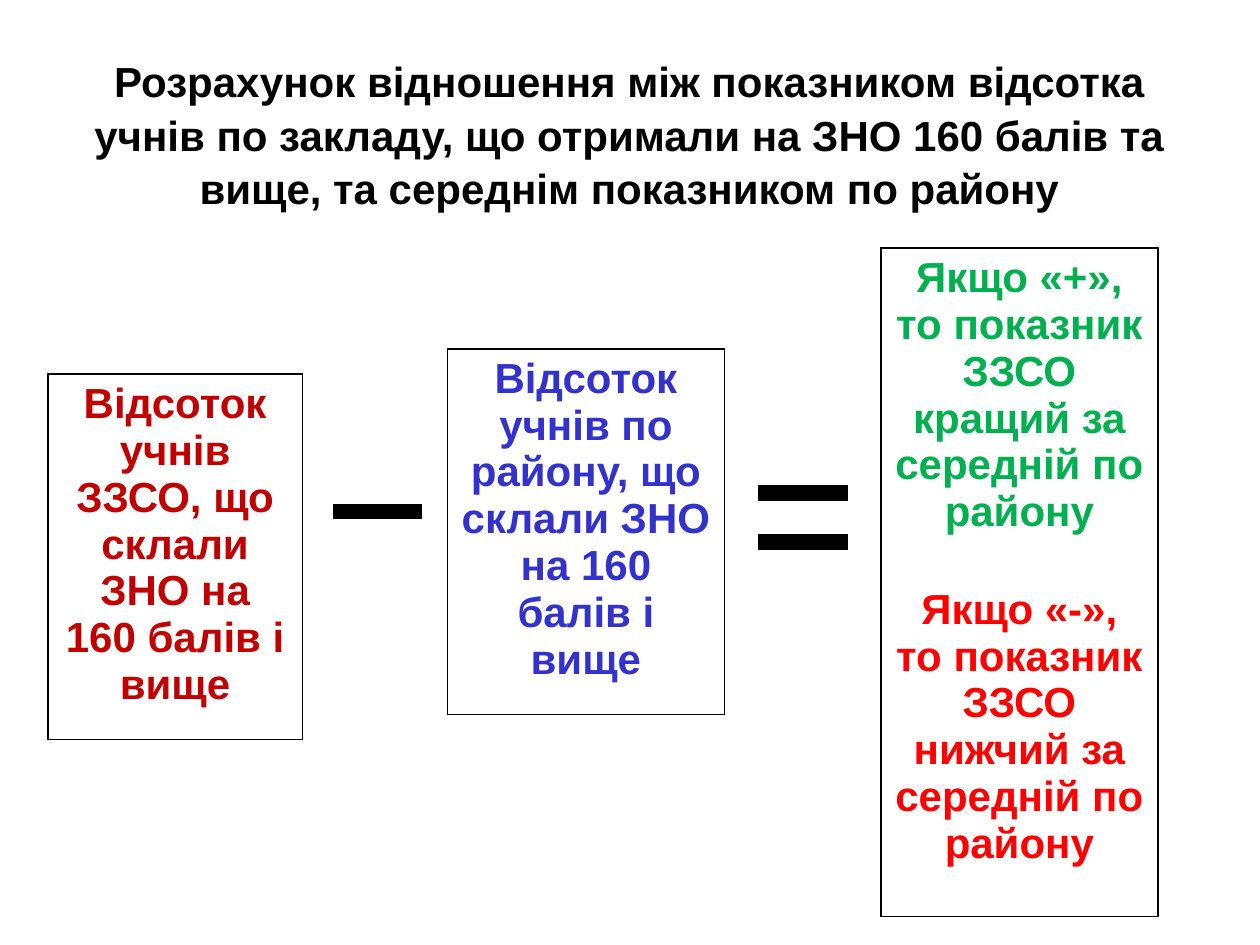
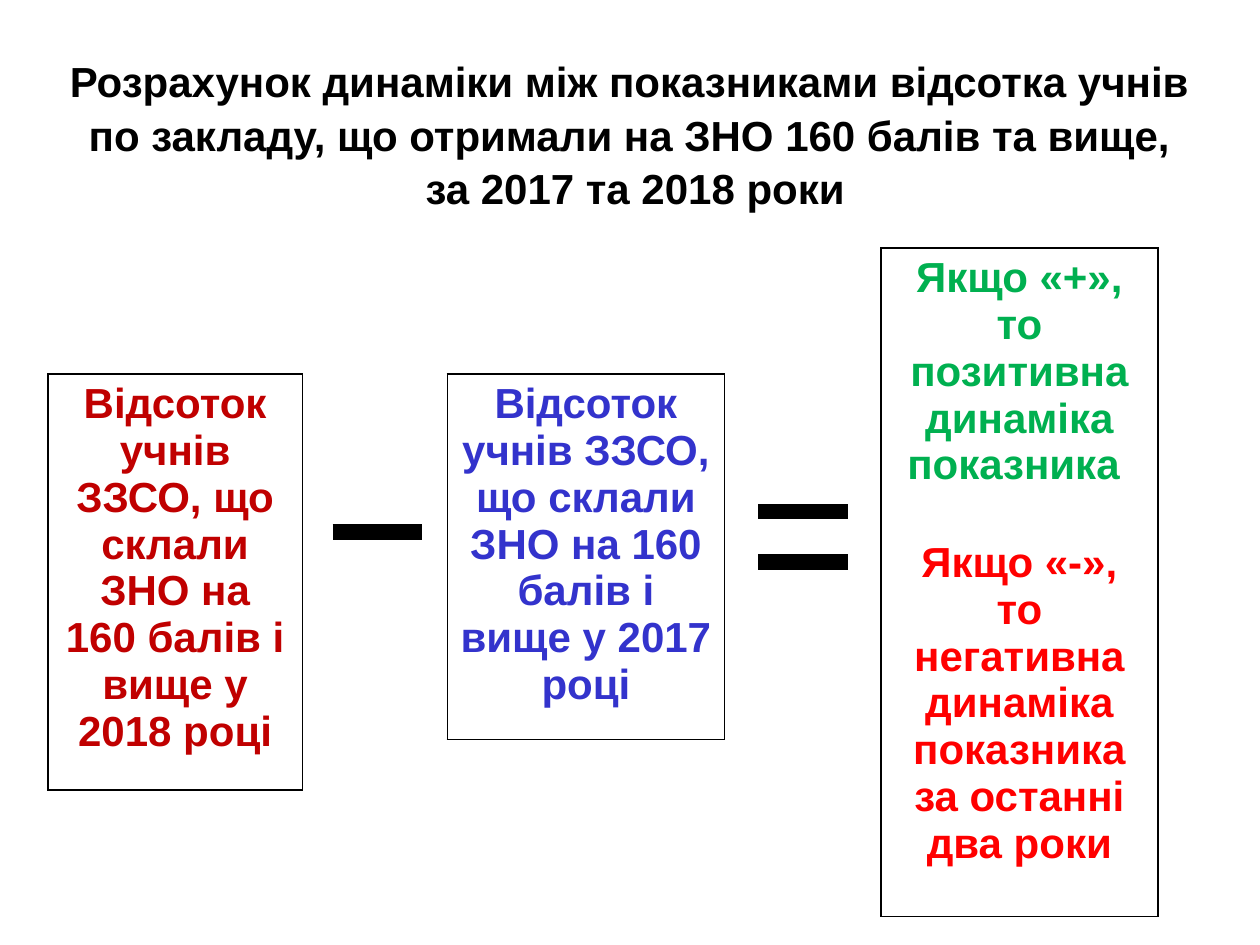
from dataclasses import dataclass

from lxml.etree import SubElement
from pptx import Presentation
from pptx.dml.color import RGBColor
from pptx.enum.shapes import MSO_CONNECTOR
from pptx.enum.text import PP_ALIGN
from pptx.oxml.ns import qn
from pptx.util import Inches, Pt


@dataclass(frozen=True)
class Theme:
    font: str = "Arial"
    size: int = 24
    ink: str = "000000"
    paper: str = "FFFFFF"
    own: str = "C00000"
    base: str = "3333CC"
    good: str = "00B050"
    bad: str = "FF0000"
    edge: int = 1
    bar: int = 9
    gap: int = 29


theme = Theme()

pages = [
    {
        "title": ["Розрахунок відношення між показником відсотка учнів по закладу, "
                  "що отримали на ЗНО 160 балів та вище, та середнім показником по району"],
        "boxes": [
            (2.97, 2.9, [("Відсоток учнів ЗЗСО, що склали ЗНО на 160 балів і вище", theme.own)]),
            (2.77, 2.9, [("Відсоток учнів по району, що склали ЗНО на 160 балів і вище",
                          theme.base)]),
            (1.97, 5.3, [("Якщо «+», то показник ЗЗСО кращий за середній по району", theme.good),
                         ("Якщо «-», то показник ЗЗСО нижчий за середній по району", theme.bad)]),
        ],
        "minus": 4.06,
        "equal": (3.91, 4.3),
    },
    {
        "title": ["Розрахунок динаміки між показниками відсотка учнів по закладу, "
                  "що отримали на ЗНО 160 балів та вище,",
                  " за 2017 та 2018 роки"],
        "boxes": [
            (2.97, 3.3, [("Відсоток учнів ЗЗСО, що склали ЗНО на 160 балів і вище у 2018 році",
                          theme.own)]),
            (2.97, 2.9, [("Відсоток учнів ЗЗСО, що склали ЗНО на 160 балів і вище у 2017 році",
                          theme.base)]),
            (1.97, 5.3, [("Якщо «+», то позитивна динаміка показника ", theme.good),
                         ("Якщо «-», то негативна динаміка показника за останні два роки",
                          theme.bad)]),
        ],
        "minus": 4.22,
        "equal": (4.06, 4.46),
    },
]
slots = [(0.38, 2.02), (3.55, 2.2), (6.99, 2.2)]


def write(frame, lines, gap=0, pitch=1.0):
    frame.word_wrap = True
    for i, (text, color) in enumerate(lines):
        para = frame.add_paragraph() if i else frame.paragraphs[0]
        para.text = text
        para.alignment = PP_ALIGN.CENTER
        para.line_spacing = pitch
        para.space_before = Pt(gap if i else 0)
        para.font.name = theme.font
        para.font.size = Pt(theme.size)
        para.font.bold = True
        para.font.color.rgb = RGBColor.from_string(color)


def frame_cell(cell):
    props = cell._tc.get_or_add_tcPr()
    for side in ("a:lnL", "a:lnR", "a:lnT", "a:lnB"):
        line = SubElement(props, qn(side), w=str(Pt(theme.edge)))
        fill = SubElement(line, qn("a:solidFill"))
        SubElement(fill, qn("a:srgbClr"), val=theme.ink)
    cell.fill.solid()
    cell.fill.fore_color.rgb = RGBColor.from_string(theme.paper)


deck = Presentation()
deck.slide_width = Inches(10)
deck.slide_height = Inches(7.5)

for page in pages:
    slide = deck.slides.add_slide(deck.slide_layouts[6])
    title = slide.shapes.add_textbox(Inches(0.35), Inches(0.36), Inches(9.29), Inches(1.31))
    write(title.text_frame, [(text, theme.ink) for text in page["title"]], pitch=1.07)

    for (left, width), (top, height, lines) in zip(slots, page["boxes"]):
        grid = slide.shapes.add_table(
            1, 1, Inches(left), Inches(top), Inches(width), Inches(height)).table
        grid.first_row = False
        grid.horz_banding = False
        cell = grid.cell(0, 0)
        frame_cell(cell)
        write(cell.text_frame, lines, gap=theme.gap)

    signs = [(2.64, page["minus"])] + [(6.02, y) for y in page["equal"]]
    for x, y in signs:
        bar = slide.shapes.add_connector(
            MSO_CONNECTOR.STRAIGHT, Inches(x), Inches(y), Inches(x + 0.71), Inches(y))
        bar.line.width = Pt(theme.bar)
        bar.line.color.rgb = RGBColor.from_string(theme.ink)
        SubElement(bar._element.spPr, qn("a:effectLst"))

deck.save("out.pptx")
